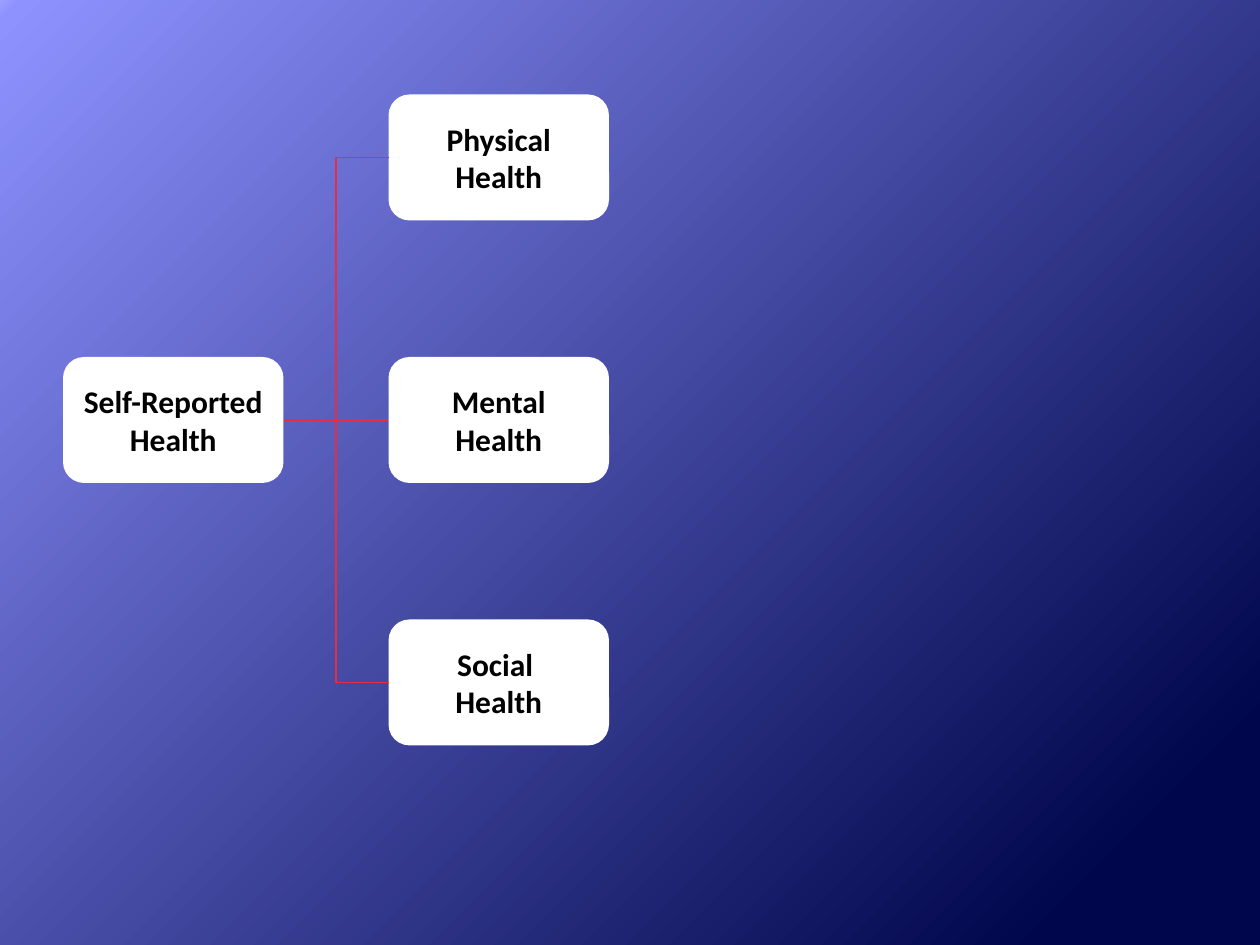
from copy import deepcopy
from dataclasses import dataclass

from pptx import Presentation
from pptx import util as u
from pptx.dml.color import RGBColor
from pptx.enum import shapes, text
from pptx.oxml import ns, xmlchemy

WIDE, HIGH = 1.75, 1.0
STEP = 25 / 12
MID = 0.75 + STEP
LEFT, RIGHT = 0.5, 37 / 12


@dataclass
class Box:
    label: str
    x: float
    y: float


ROOT = Box("Self-Reported Health", LEFT, MID)
PARTS = [
    Box("Physical Health", RIGHT, MID - STEP),
    Box("Mental Health", RIGHT, MID),
    Box("Social \nHealth", RIGHT, MID + STEP),
]
STOPS = [(0, "9BA0FF"), (0.01, "8D92FF"), (0.9, "00064B")]


def paint(color, code: str) -> None:
    color.rgb = RGBColor.from_string(code)


def shade(slide) -> None:
    """Fill the background with a diagonal gradient."""
    fill = slide.background.fill
    fill.gradient()
    fill.gradient_angle = 315
    stops = slide.element.find(".//" + ns.qn("a:gsLst"))
    stops.append(deepcopy(stops[-1]))
    for stop, (place, code) in zip(fill.gradient_stops, STOPS):
        stop.position = place
        paint(stop.color, code)


def draw_box(slide, box: Box):
    shape = slide.shapes.add_shape(
        shapes.MSO_SHAPE.ROUNDED_RECTANGLE,
        u.Inches(box.x), u.Inches(box.y), u.Inches(WIDE), u.Inches(HIGH))
    shape.shadow.inherit = False
    shape.fill.solid()
    paint(shape.fill.fore_color, "FFFFFF")
    shape.line.fill.background()
    frame = shape.text_frame
    frame.text = box.label
    frame.word_wrap = True
    frame.vertical_anchor = text.MSO_ANCHOR.MIDDLE
    for para in frame.paragraphs:
        para.alignment = text.PP_ALIGN.CENTER
        for run in para.runs:
            run.font.name = "Calibri"
            run.font.size = u.Pt(18)
            run.font.bold = True
            paint(run.font.color, "000000")
    return shape


def link(slide, start, end) -> None:
    """Join the right side of one box to the left side of another."""
    kinds = shapes.MSO_CONNECTOR
    kind = kinds.STRAIGHT if start.top == end.top else kinds.ELBOW
    line = slide.shapes.add_connector(kind, 0, 0, 0, 0)
    line.begin_connect(start, 3)
    line.end_connect(end, 1)
    paint(line.line.color, "E72C43")
    line.line.width = u.Pt(1)
    line.element.spPr.append(xmlchemy.OxmlElement("a:effectLst"))


def main() -> None:
    deck = Presentation()
    deck.slide_width, deck.slide_height = u.Inches(10), u.Inches(7.5)
    slide = deck.slides.add_slide(deck.slide_layouts[6])
    shade(slide)

    # Boxes
    root = draw_box(slide, ROOT)
    parts = [draw_box(slide, box) for box in PARTS]

    # Branches
    for part in parts:
        link(slide, root, part)

    deck.save("out.pptx")


if __name__ == "__main__":
    main()
